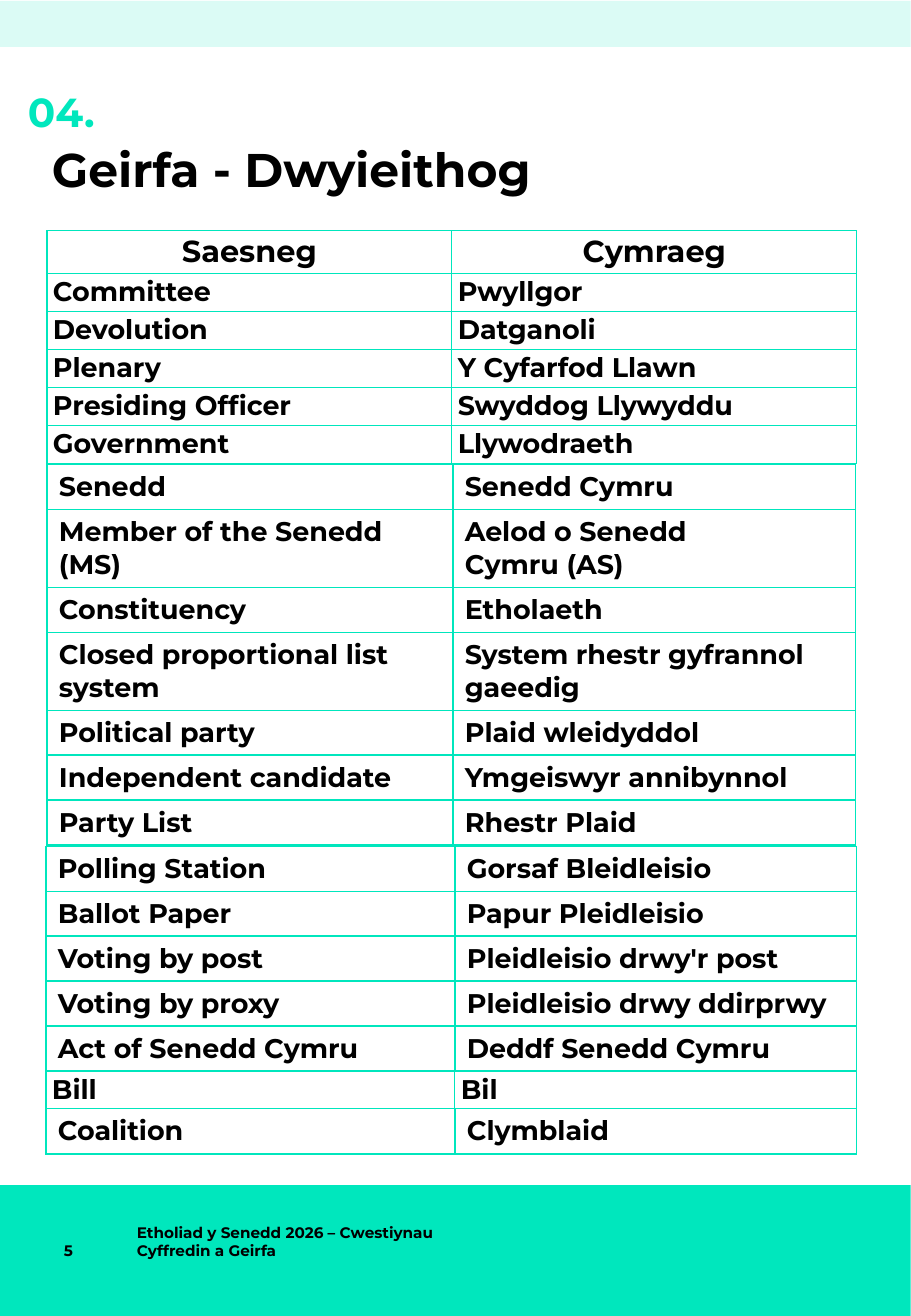
from lxml import etree
from pptx import Presentation
from pptx.dml.color import RGBColor
from pptx.enum.shapes import MSO_SHAPE
from pptx.enum.text import MSO_ANCHOR, MSO_AUTO_SIZE, PP_ALIGN
from pptx.oxml.ns import qn
from pptx.util import Inches, Pt

PX = 7526  # EMU per px, 121.5 px to the inch
RECT = MSO_SHAPE.RECTANGLE
TOP, MIDDLE = MSO_ANCHOR.TOP, MSO_ANCHOR.MIDDLE
NO_FIT = MSO_AUTO_SIZE.NONE
LEFT, CENTER = PP_ALIGN.LEFT, PP_ALIGN.CENTER
FONT = "Montserrat"
COLORS = {"mint": "00E7BD", "border": "00E6BD", "text": "000000"}
NBSP = chr(160)

# Row kinds: (height, side margin, top margin, border points)
HEAD = (43, 6, 2, 0.75)
TIGHT = (38, 6, 2, 0.75)
ROOMY = (45, 12, 6, 1)
DOUBLE = (78, 12, 6, 1)

INSTITUTIONS = [
    (HEAD, "Saesneg", "Cymraeg"),
    (TIGHT, "Committee", "Pwyllgor"),
    (TIGHT, "Devolution", "Datganoli"),
    (TIGHT, "Plenary", "Y Cyfarfod Llawn"),
    (TIGHT, "Presiding Officer", "Swyddog Llywyddu"),
    (TIGHT, "Government", "Llywodraeth"),
]
CANDIDATES = [
    (ROOMY, "Senedd", "Senedd Cymru"),
    (DOUBLE, "Member of the Senedd (MS)", f"Aelod o Senedd Cymru{NBSP}(AS)"),
    (ROOMY, "Constituency", "Etholaeth"),
    (DOUBLE, "Closed proportional list system", "System rhestr gyfrannol gaeedig"),
    (ROOMY, "Political party", "Plaid wleidyddol"),
    (ROOMY, "Independent candidate", "Ymgeiswyr annibynnol"),
    (ROOMY, "Party List", "Rhestr Plaid"),
]
VOTING = [
    (ROOMY, "Polling Station", "Gorsaf Bleidleisio"),
    (ROOMY, "Ballot Paper", "Papur Pleidleisio"),
    (ROOMY, "Voting by post", "Pleidleisio drwy'r post"),
    (ROOMY, "Voting by proxy", "Pleidleisio drwy ddirprwy"),
    (ROOMY, "Act of Senedd Cymru", "Deddf Senedd Cymru"),
    (TIGHT, "Bill", "Bil"),
    (ROOMY, "Coalition", "Clymblaid"),
]


def px(*values):
    return [v * PX for v in values]


def rgb(name):
    return RGBColor.from_string(COLORS[name])


def write(tf, text, size=16, color="text", align=LEFT, spacing=None):
    p = tf.paragraphs[0]
    p.alignment = align
    if spacing:
        p.line_spacing = spacing
    r = p.add_run()
    r.text = text
    r.font.name = FONT
    r.font.size = Pt(size)
    r.font.bold = True
    r.font.color.rgb = rgb(color)
    return p


def add_band(slide, box, alpha=None):
    sp = slide.shapes.add_shape(RECT, *px(*box))
    sp.shadow.inherit = False
    sp.fill.solid()
    sp.fill.fore_color.rgb = rgb("mint")
    sp.line.fill.background()
    if alpha:
        color = sp.fill._xPr.find(".//" + qn("a:srgbClr"))
        etree.SubElement(color, qn("a:alpha"), val=str(alpha * 1000))


def fill_placeholder(sp, box, text, **fmt):
    sp.left, sp.top, sp.width, sp.height = px(*box)
    tf = sp.text_frame
    tf.margin_left = tf.margin_top = tf.margin_right = tf.margin_bottom = 0
    tf.vertical_anchor = TOP
    tf.auto_size = NO_FIT
    p = write(tf, text, **fmt)
    p.space_before = Pt(0)
    return p


def remove_bullet(p):
    pPr = p._p.get_or_add_pPr()
    pPr.set("marL", "0")
    pPr.set("indent", "0")
    etree.SubElement(pPr, qn("a:buNone"))


def add_footer_text(slide, box, text):
    tf = slide.shapes.add_textbox(*px(*box)).text_frame
    tf.word_wrap = True
    tf.vertical_anchor = MIDDLE
    write(tf, text, size=9)


def set_borders(cell, width, top_width):
    tcPr = cell._tc.get_or_add_tcPr()
    for side, points in (("L", width), ("R", width), ("T", top_width), ("B", width)):
        ln = etree.SubElement(tcPr, qn("a:ln" + side), w=str(Pt(points)))
        fill = etree.SubElement(ln, qn("a:solidFill"))
        etree.SubElement(fill, qn("a:srgbClr"), val=COLORS["border"])


def add_glossary(slide, left, top, widths, rows):
    height = sum(kind[0] for kind, *_ in rows)
    frame = slide.shapes.add_table(len(rows), 2, *px(left, top, sum(widths), height))
    table = frame.table
    table.first_row = table.horz_banding = False
    for column, width in zip(table.columns, widths):
        column.width = width * PX
    top_border = rows[0][0][3]
    for row, (kind, *terms) in zip(table.rows, rows):
        row_height, side, edge, border = kind
        row.height = row_height * PX
        for cell, term in zip(row.cells, terms):
            cell.margin_left = cell.margin_right = side * PX
            cell.margin_top = cell.margin_bottom = edge * PX
            set_borders(cell, border, top_border)
            cell.fill.background()
            if kind is HEAD:
                write(cell.text_frame, term, size=18, align=CENTER)
            else:
                write(cell.text_frame, term)
        top_border = border


def main():
    prs = Presentation()
    prs.slide_width, prs.slide_height = Inches(7.5), Inches(10.84)
    slide = prs.slides.add_slide(prs.slide_layouts[1])
    title, number = slide.placeholders

    add_band(slide, (0, 1186, 911, 131))
    add_band(slide, (0, 1, 911, 46), alpha=14)
    fill_placeholder(title, (52, 147, 829, 109), "Geirfa - Dwyieithog",
                     size=28, spacing=0.9)
    p = fill_placeholder(number, (28, 87, 785, 45), "04.", size=24, color="mint")
    remove_bullet(p)

    add_footer_text(slide, (125, 1186, 382, 113),
                    "Etholiad y Senedd 2026 – Cwestiynau Cyffredin a Geirfa")
    add_footer_text(slide, (52, 1186, 75, 131), "5")

    add_glossary(slide, 47, 231, (405, 405), INSTITUTIONS)
    add_glossary(slide, 47, 465, (406, 403), CANDIDATES)
    add_glossary(slide, 46, 847, (409, 402), VOTING)
    prs.save("out.pptx")


if __name__ == "__main__":
    main()
